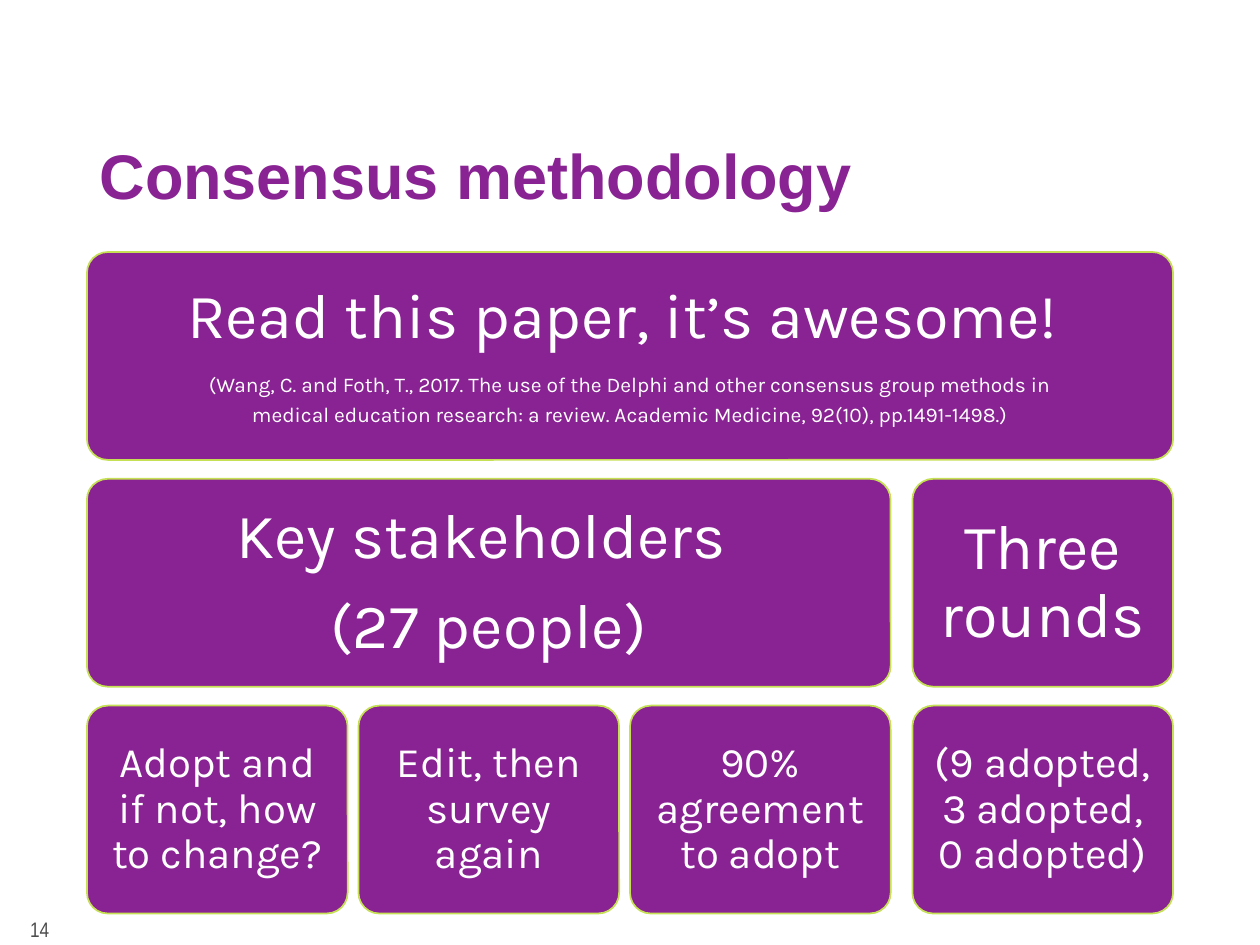
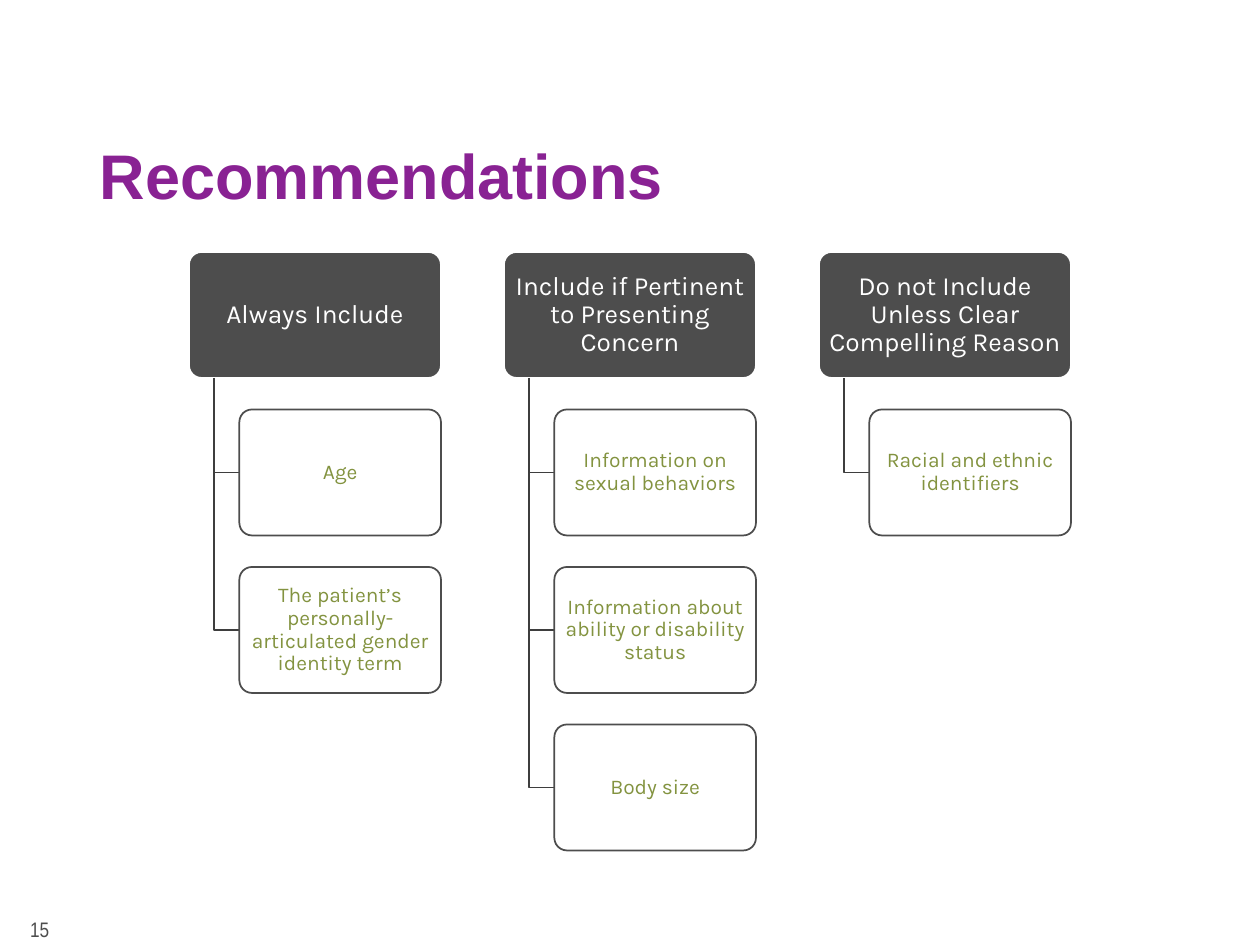
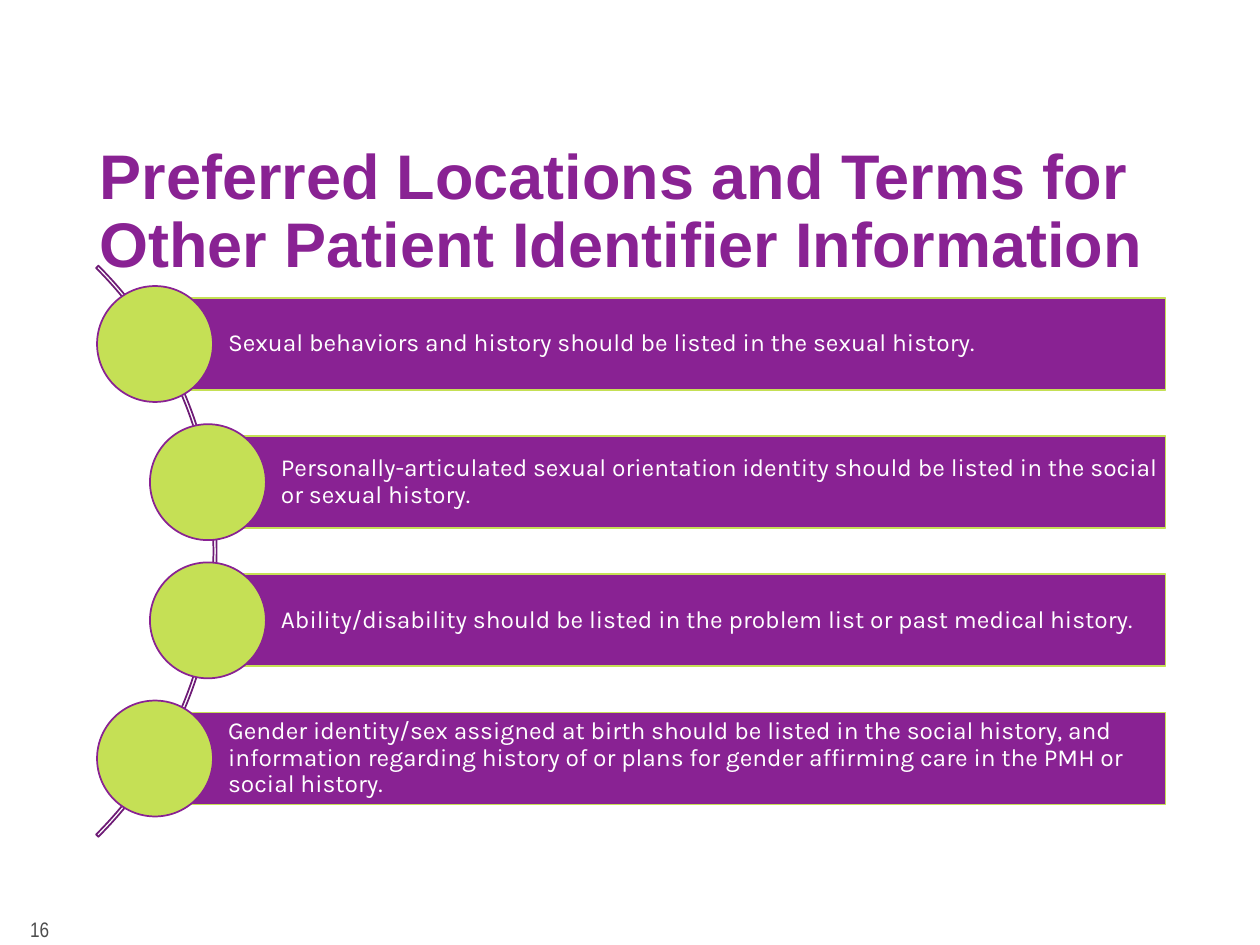
from collections import namedtuple

from lxml import etree
from pptx import Presentation
from pptx import util as u
from pptx.dml.color import RGBColor
from pptx.enum import shapes, text
from pptx.oxml import ns

Box = namedtuple("Box", "x y w h")

COLORS = {
    "purple": "892293", "plum": "6E1B76", "lime": "C5E055", "olive": "839340",
    "gray": "4D4D4D", "charcoal": "3E3E3E", "white": "FFFFFF",
}
HEADING, BODY, FOOTER = "Arial", "Karla", "Arial Narrow"
SLIDE_W, SLIDE_H = 10, 7.5
MARGIN = 0.69
CONTENT_W = SLIDE_W - 2 * MARGIN
TITLE = Box(MARGIN, 1.1, CONTENT_W, 0.75)
PAGE_NUMBER = Box(0.14, 7.25, 2.25, 0.25)
FIRST_PAGE = 14
SHAPE = shapes.MSO_SHAPE


# Shared helpers
def rgb(name):
    return RGBColor.from_string(COLORS[name])


def emu(lengths):
    return [u.Inches(length) for length in lengths]


def style_font(paragraph, face, size, color, bold=False):
    font = paragraph.font
    font.name, font.size, font.bold = face, u.Pt(size), bold
    font.color.rgb = rgb(color)


def outline(shape, fill, line):
    """Flat shape with a one-point outline; no fill when fill is None."""
    shape.shadow.inherit = False
    if fill:
        shape.fill.solid()
        shape.fill.fore_color.rgb = rgb(fill)
    else:
        shape.fill.background()
    shape.line.color.rgb = rgb(line)
    shape.line.width = u.Pt(1)


def add_panel(slide, kind, box, fill, line, corner=None):
    panel = slide.shapes.add_shape(kind, *emu(box))
    outline(panel, fill, line)
    if corner is not None:
        panel.adjustments[0] = corner
    return panel


def write(panel, lines, insets, color="white", align=text.PP_ALIGN.CENTER):
    """Write (wording, size) lines; insets are left, top, right, bottom."""
    frame = panel.text_frame
    frame.word_wrap = True
    frame.vertical_anchor = text.MSO_ANCHOR.MIDDLE
    (frame.margin_left, frame.margin_top,
     frame.margin_right, frame.margin_bottom) = emu(insets)
    for i, (wording, size) in enumerate(lines):
        paragraph = frame.add_paragraph() if i else frame.paragraphs[0]
        paragraph.text = wording
        paragraph.alignment = align
        paragraph.line_spacing = 0.9
        paragraph.space_after = u.Pt(0.35 * size)
        style_font(paragraph, BODY, size, color)


def add_slide(prs, heading):
    slide = prs.slides.add_slide(prs.slide_layouts[5])

    # Title
    title = slide.shapes.title
    title.left, title.top, title.width, title.height = emu(TITLE)
    frame = title.text_frame
    frame.text = heading
    frame.auto_size = text.MSO_AUTO_SIZE.NONE
    frame.vertical_anchor = text.MSO_ANCHOR.TOP
    paragraph = frame.paragraphs[0]
    paragraph.alignment = text.PP_ALIGN.LEFT
    paragraph.line_spacing = 0.9
    style_font(paragraph, HEADING, 36, "purple", bold=True)

    # Page number
    page = slide.shapes.add_textbox(*emu(PAGE_NUMBER)).text_frame
    page.word_wrap = True
    page.vertical_anchor = text.MSO_ANCHOR.MIDDLE
    page.text = str(FIRST_PAGE + len(prs.slides) - 1)
    style_font(page.paragraphs[0], FOOTER, 12, "gray")
    return slide


# Block grid: four columns by three rows, the last column set apart
def block_grid(slide, box, blocks):
    gap, row_gap = 0.01 * box.w, 0.15
    cell_w = (box.w - 4 * gap) / 4
    cell_h = (box.h - 2 * row_gap) / 3
    for row, col, span, lines in blocks:
        x = box.x + col * (cell_w + gap) + (gap if col == 3 else 0)
        w = span * cell_w + (span - 1) * gap + (gap if col + span == 4 and span > 1 else 0)
        y = box.y + row * (cell_h + row_gap)
        block = add_panel(slide, SHAPE.ROUNDED_RECTANGLE, Box(x, y, w, cell_h),
                          "purple", "lime", corner=0.1)
        inset = 0.1 if row == 2 else 0.15
        write(block, lines, [inset] * 4)


# Hierarchy: one column per heading, its items hanging from a trunk
def add_branch(slide, trunk_x, top, item_x, item_y):
    start, bend, end = (emu(point) for point in
                        ((trunk_x, top), (trunk_x, item_y), (item_x, item_y)))
    builder = slide.shapes.build_freeform(*start)
    builder.add_line_segments([bend, end], close=False)
    outline(builder.convert_to_shape(), None, "charcoal")


def hierarchy(slide, box, groups):
    column_w = box.w / (len(groups) * 1.25 - 0.25)
    node_h = column_w / 2
    step = 1.25 * node_h
    indent = 0.1 * column_w
    insets = (0.03, 0.02, 0.03, 0.02)
    for col, (heading, items) in enumerate(groups):
        x = box.x + col * 1.25 * column_w
        head = add_panel(slide, SHAPE.ROUNDED_RECTANGLE, Box(x, box.y, column_w, node_h),
                         "gray", "white", corner=0.1)
        write(head, [(heading, 15)], insets)
        for row, wording in enumerate(items, 1):
            item = Box(x + 2 * indent, box.y + row * step, column_w - 2 * indent, node_h)
            add_branch(slide, x + indent, box.y + node_h, item.x, item.y + node_h / 2)
            node = add_panel(slide, SHAPE.ROUNDED_RECTANGLE, item, "white", "gray", corner=0.1)
            fill_color = node._element.spPr.find(ns.qn("a:solidFill"))[0]
            etree.SubElement(fill_color, ns.qn("a:alpha"), val="90000")
            write(node, [(wording, 12)], insets, "olive")


# Curved list: bars led by discs that follow an arc
def curved_list(slide, box, entries):
    disc, bar_h, bulge = 0.92, 0.73, 0.42
    step = (box.h - disc) / (len(entries) - 1)

    # Arc
    size = 6.41
    arc = add_panel(slide, SHAPE.BLOCK_ARC,
                    Box(box.x + 0.95 - size, box.y + (box.h - size) / 2, size, size),
                    None, "plum")
    for i, value in enumerate((189, 27, 0.004)):
        arc.adjustments[i] = value

    # Bars and discs
    for i, wording in enumerate(entries):
        x = box.x + (bulge if 0 < i < len(entries) - 1 else 0)
        y = box.y + i * step
        bar_x = x + disc / 2
        bar = add_panel(slide, SHAPE.RECTANGLE,
                        Box(bar_x, y + (disc - bar_h) / 2, box.x + box.w - bar_x, bar_h),
                        "purple", "lime")
        write(bar, [(wording, 14)], (0.58, 0.04, 0.04, 0.04), align=text.PP_ALIGN.LEFT)
        add_panel(slide, SHAPE.OVAL, Box(x, y, disc, disc), "lime", "purple")


# Content: row, column, columns spanned, lines
METHOD = [
    (0, 0, 4, [
        ("Read this paper, it’s awesome! ", 36),
        ("(Wang, C. and Foth, T., 2017. The use of the Delphi and other consensus group methods in", 12),
        ("medical education research: a review. Academic Medicine, 92(10), pp.1491-1498.)", 12),
    ]),
    (1, 0, 3, [("Key stakeholders ", 36), ("(27 people)", 36)]),
    (1, 3, 1, [("Three rounds", 36)]),
    (2, 0, 1, [("Adopt and if not, how to change?", 24)]),
    (2, 1, 1, [("Edit, then survey again", 24)]),
    (2, 2, 1, [("90% agreement to adopt", 24)]),
    (2, 3, 1, [("(9 adopted, 3 adopted, 0 adopted)", 24)]),
]
RECOMMENDATIONS = [
    ("Always Include",
     ["Age", "The patient’s personally-articulated gender identity term"]),
    ("Include if Pertinent to Presenting Concern",
     ["Information on sexual behaviors",
      "Information about ability or disability status",
      "Body size"]),
    ("Do not Include Unless Clear Compelling Reason",
     ["Racial and ethnic identifiers"]),
]
LOCATIONS = [
    "Sexual behaviors and history should be listed in the sexual history.",
    "Personally-articulated sexual orientation identity should be listed in the social "
    "or sexual history.",
    "Ability/disability should be listed in the problem list or past medical history.",
    "Gender identity/sex assigned at birth should be listed in the social history, and "
    "information regarding history of or plans for gender affirming care in the PMH or "
    "social history.",
]


def main():
    prs = Presentation()
    prs.slide_width, prs.slide_height = u.Inches(SLIDE_W), u.Inches(SLIDE_H)
    block_grid(add_slide(prs, "Consensus methodology"),
               Box(MARGIN, 2, CONTENT_W, 5.25), METHOD)
    hierarchy(add_slide(prs, "Recommendations"),
              Box(1.5, 2, 7, 4.75), RECOMMENDATIONS)
    curved_list(add_slide(prs, "Preferred Locations and Terms for "
                               "Other Patient Identifier Information"),
                Box(0.77, 2.27, 8.48, 4.21), LOCATIONS)
    prs.save("out.pptx")


if __name__ == "__main__":
    main()
